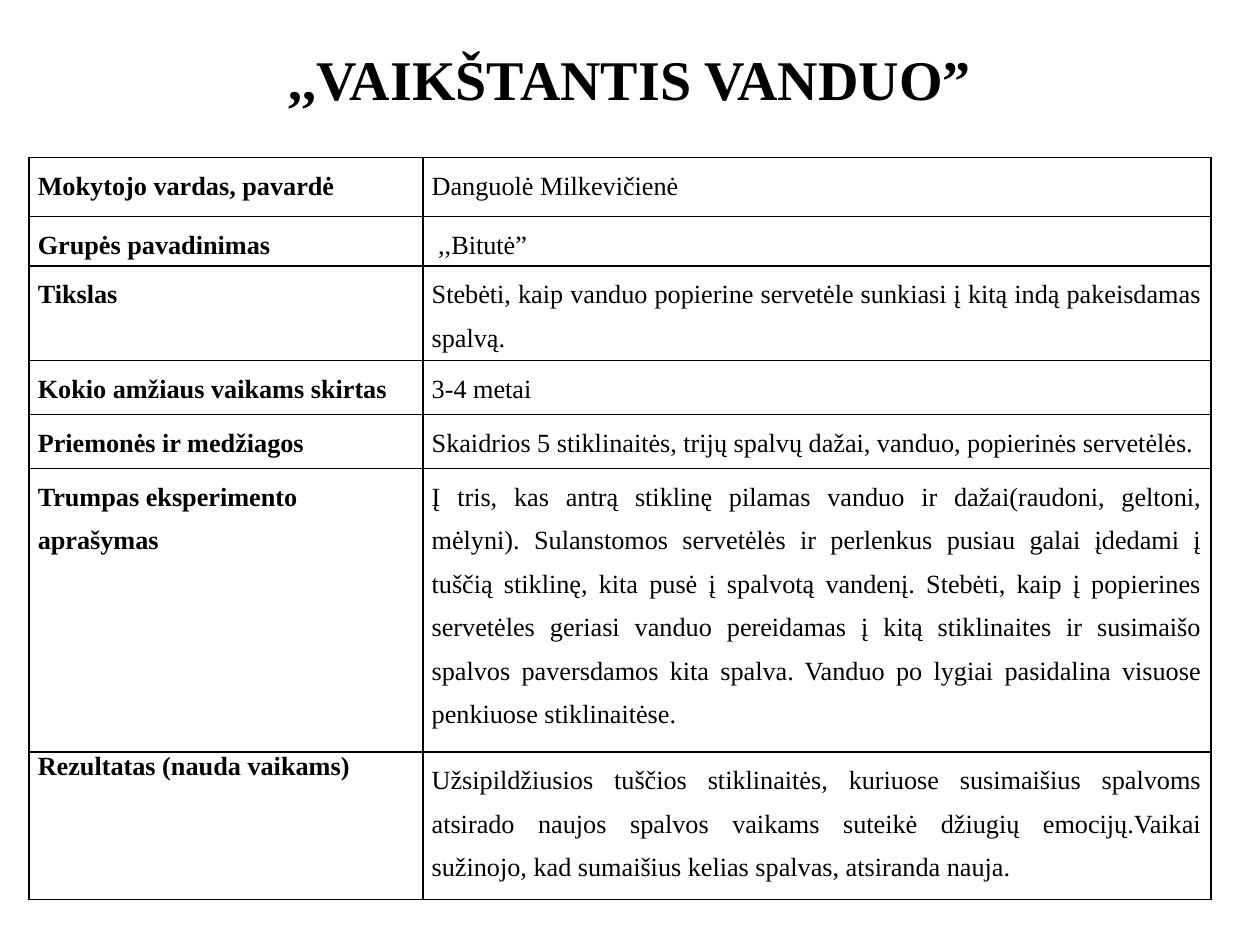
import dataclasses

import lxml.etree
import pptx
import pptx.dml.color
import pptx.enum.text
import pptx.oxml.ns
import pptx.slide
import pptx.table
import pptx.text.text
import pptx.util

WIDE = pptx.util.Inches(10)
HIGH = pptx.util.Inches(7.5)
FONT = "Times New Roman"
INK = "000000"
ALIGN = pptx.enum.text.PP_ALIGN


@dataclasses.dataclass
class Entry:
    label: str
    value: str
    height: float
    align: ALIGN = ALIGN.LEFT
    after: float = 0
    lines: float = 1.5


ROWS = [
    Entry("Mokytojo vardas, pavardė", "Danguolė Milkevičienė", 0.47),
    Entry("Grupės pavadinimas", " ,,Bitutė”", 0.39),
    Entry(
        "Tikslas",
        "Stebėti, kaip vanduo popierine servetėle sunkiasi į kitą indą "
        "pakeisdamas spalvą.",
        0.75, ALIGN.JUSTIFY,
    ),
    Entry("Kokio amžiaus vaikams skirtas", "3-4 metai", 0.43, after=10),
    Entry(
        "Priemonės ir medžiagos",
        "Skaidrios 5 stiklinaitės, trijų spalvų dažai, vanduo, "
        "popierinės servetėlės.",
        0.43, ALIGN.JUSTIFY, 10,
    ),
    Entry(
        "Trumpas eksperimento aprašymas",
        "Į tris, kas antrą stiklinę pilamas vanduo ir dažai(raudoni, geltoni, "
        "mėlyni). Sulanstomos servetėlės ir perlenkus pusiau galai įdedami į "
        "tuščią stiklinę, kita pusė į spalvotą vandenį. Stebėti, kaip į "
        "popierines servetėles geriasi vanduo pereidamas į kitą stiklinaites "
        "ir susimaišo spalvos paversdamos kita spalva. Vanduo po lygiai "
        "pasidalina visuose penkiuose stiklinaitėse.",
        2.25, ALIGN.JUSTIFY, 10,
    ),
    Entry(
        "Rezultatas (nauda vaikams)",
        "Užsipildžiusios tuščios stiklinaitės, kuriuose susimaišius spalvoms "
        "atsirado naujos spalvos vaikams suteikė džiugių emocijų."
        "Vaikai sužinojo, kad sumaišius kelias spalvas, atsiranda nauja.",
        1.17, ALIGN.JUSTIFY, 10, 1,
    ),
]


def tint(code: str) -> pptx.dml.color.RGBColor:
    return pptx.dml.color.RGBColor.from_string(code)


def write(
    frame: pptx.text.text.TextFrame,
    text: str,
    size: float,
    bold: bool,
    align: ALIGN,
    lines: float = 1,
    after: float = 0,
) -> None:
    frame.word_wrap = True
    para = frame.paragraphs[0]
    para.alignment = align
    para.line_spacing = float(lines)
    para.space_after = pptx.util.Pt(after)
    run = para.add_run()
    run.text = text
    run.font.name = FONT
    run.font.size = pptx.util.Pt(size)
    run.font.bold = bold
    run.font.color.rgb = tint(INK)


def frame_cell(cell: pptx.table._Cell) -> None:
    cell.margin_left = cell.margin_right = pptx.util.Inches(0.07)
    cell.margin_top = cell.margin_bottom = 0
    props = cell._tc.get_or_add_tcPr()
    name = pptx.oxml.ns.qn
    for side in ("lnL", "lnR", "lnT", "lnB"):
        line = lxml.etree.SubElement(
            props, name(f"a:{side}"), w=str(pptx.util.Pt(1))
        )
        fill = lxml.etree.SubElement(line, name("a:solidFill"))
        lxml.etree.SubElement(fill, name("a:srgbClr"), val=INK)
    cell.fill.background()


def add_title(slide: pptx.slide.Slide, text: str) -> None:
    box = slide.shapes.add_textbox(
        0, int(HIGH * 0.04), WIDE, int(HIGH * 0.085)
    )
    write(box.text_frame, text, 32, True, ALIGN.CENTER)


def add_grid(slide: pptx.slide.Slide, rows: list[Entry]) -> None:
    total = pptx.util.Inches(sum(row.height for row in rows))
    width = int(WIDE * 0.938)
    shape = slide.shapes.add_table(
        len(rows), 2, int(WIDE * 0.023), int(HIGH / 6), width, total
    )
    table = shape.table
    table.first_row = table.horz_banding = False
    table.columns[0].width = width // 3
    table.columns[1].width = width - width // 3
    for index, row in enumerate(rows):
        table.rows[index].height = pptx.util.Inches(row.height)
        label, value = table.cell(index, 0), table.cell(index, 1)
        frame_cell(label)
        frame_cell(value)
        write(label.text_frame, row.label, 15, True, ALIGN.LEFT,
              row.lines, row.after)
        write(value.text_frame, row.value, 15, False, row.align, 1.5)


def main() -> None:
    deck = pptx.Presentation()
    deck.slide_width, deck.slide_height = WIDE, HIGH
    slide = deck.slides.add_slide(deck.slide_layouts[6])
    add_title(slide, ",,VAIKŠTANTIS VANDUO”")
    add_grid(slide, ROWS)
    deck.save("out.pptx")


if __name__ == "__main__":
    main()
